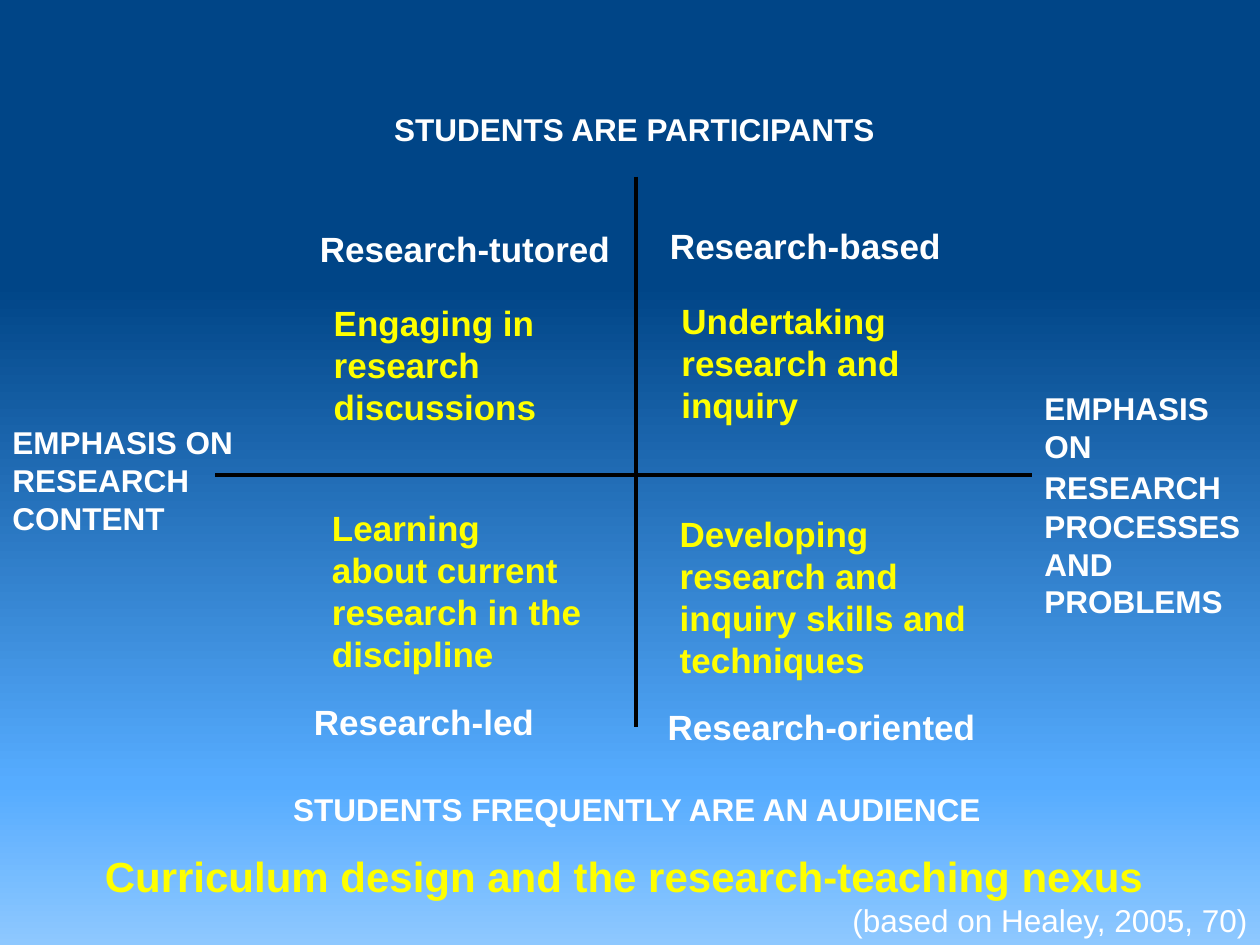
from copy import deepcopy
from pptx import Presentation
from pptx.dml.color import RGBColor as RGB
from pptx.enum.shapes import MSO_CONNECTOR as LINE
from pptx.enum.text import PP_ALIGN as ALIGN
from pptx.oxml.ns import qn
from pptx.util import Pt
from lxml import etree

HUES = {"navy": "004587", "sky": "56ACFF", "pale": "8EC8FF",
        "white": "FFFFFF", "gold": "FFFF00", "black": "000000"}

deck = Presentation()
deck.slide_width, deck.slide_height = Pt(720), Pt(540)
slide = deck.slides.add_slide(deck.slide_layouts[6])


def add_run(para, text, size, hue, bold=True):
    run = para.add_run()
    run.text = text
    look = {"name": "Arial", "size": Pt(size), "bold": bold}
    for key, value in look.items():
        setattr(run.font, key, value)
    run.font.color.rgb = RGB.from_string(HUES[hue])


def add_box(left, top, width, height, lead=3.6):
    frame = slide.shapes.add_textbox(Pt(left), Pt(top), Pt(width), Pt(height)).text_frame
    frame.word_wrap = True
    frame.margin_top = Pt(lead)
    return frame


# Background: four gradient stops, top to bottom
fill = slide.background.fill
fill.gradient()
fill.gradient_angle = 270
stops = slide.element.xpath(".//a:gsLst")[0]
for stop in list(stops)[:2]:
    stops.append(deepcopy(stop))
shades = [("navy", 0), ("navy", 0.3), ("sky", 0.83), ("pale", 1)]
for stop, (hue, place) in zip(fill.gradient_stops, shades):
    stop.color.rgb = RGB.from_string(HUES[hue])
    stop.position = place

# Axes
for ends in [(123, 271.4, 589.7, 271.4), (363.4, 101, 363.4, 415.4)]:
    axis = slide.shapes.add_connector(LINE.STRAIGHT, *map(Pt, ends))
    axis.line.color.rgb = RGB.from_string(HUES["black"])
    axis.line.width = Pt(2.25)
    etree.SubElement(axis.element.spPr, qn("a:effectLst"))

# Labels at the top and bottom of the upright axis
poles = [
    ("STUDENTS ARE PARTICIPANTS", 171.4, 41.8, 382.3, 78.5, 21),
    ("STUDENTS FREQUENTLY ARE AN AUDIENCE", 157, 408.2, 414, 65.5, 43),
]
for text, *place in poles:
    para = add_box(*place).paragraphs[0]
    para.alignment = ALIGN.CENTER
    add_run(para, text, 18, "white")

# Labels at the left and right of the level axis
para = add_box(0, 238.3, 171.4, 65.5).paragraphs[0]
add_run(para, "EMPHASIS ON RESEARCH CONTENT", 18, "white")
para = add_box(589.7, 218.9, 130.3, 118).paragraphs[0]
add_run(para, "EMPHASIS ON RESEARCH", 18, "white")
add_run(para, " ", 20, "white", False)
add_run(para, "PROCESSES AND PROBLEMS", 18, "white")

# Quadrants: name in white, activity in gold
quads = [
    ("Research-tutored", (175.7, 126.7, 182.9, 31),
     "Engaging in research discussions", (183.6, 168.7, 166.3, 79.2)),
    ("Research-based", (375.8, 124.8, 180, 31),
     "Undertaking research and inquiry", (382.3, 167.6, 163.4, 79.2)),
    ("Research-led", (172.3, 396.8, 149.8, 31),
     "Learning about current research in the discipline", (182.6, 285.8, 157, 103)),
    ("Research-oriented", (374.4, 399.6, 194.4, 31),
     "Developing research and inquiry skills and techniques", (381.3, 289.3, 183.6, 103)),
]
for name, spot, task, area in quads:
    for text, place, hue in [(name, spot, "white"), (task, area, "gold")]:
        add_run(add_box(*place).paragraphs[0], text, 20, hue)

# Title and credit at the foot
foot = add_box(0, 482.4, 720, 57.6)
title = foot.paragraphs[0]
title.alignment = ALIGN.CENTER
add_run(title, "Curriculum design and the research-teaching nexus ", 24, "gold")
credit = foot.add_paragraph()
credit.alignment = ALIGN.RIGHT
add_run(credit, "(based on Healey, 2005, 70)", 18, "white", False)

deck.save("out.pptx")
